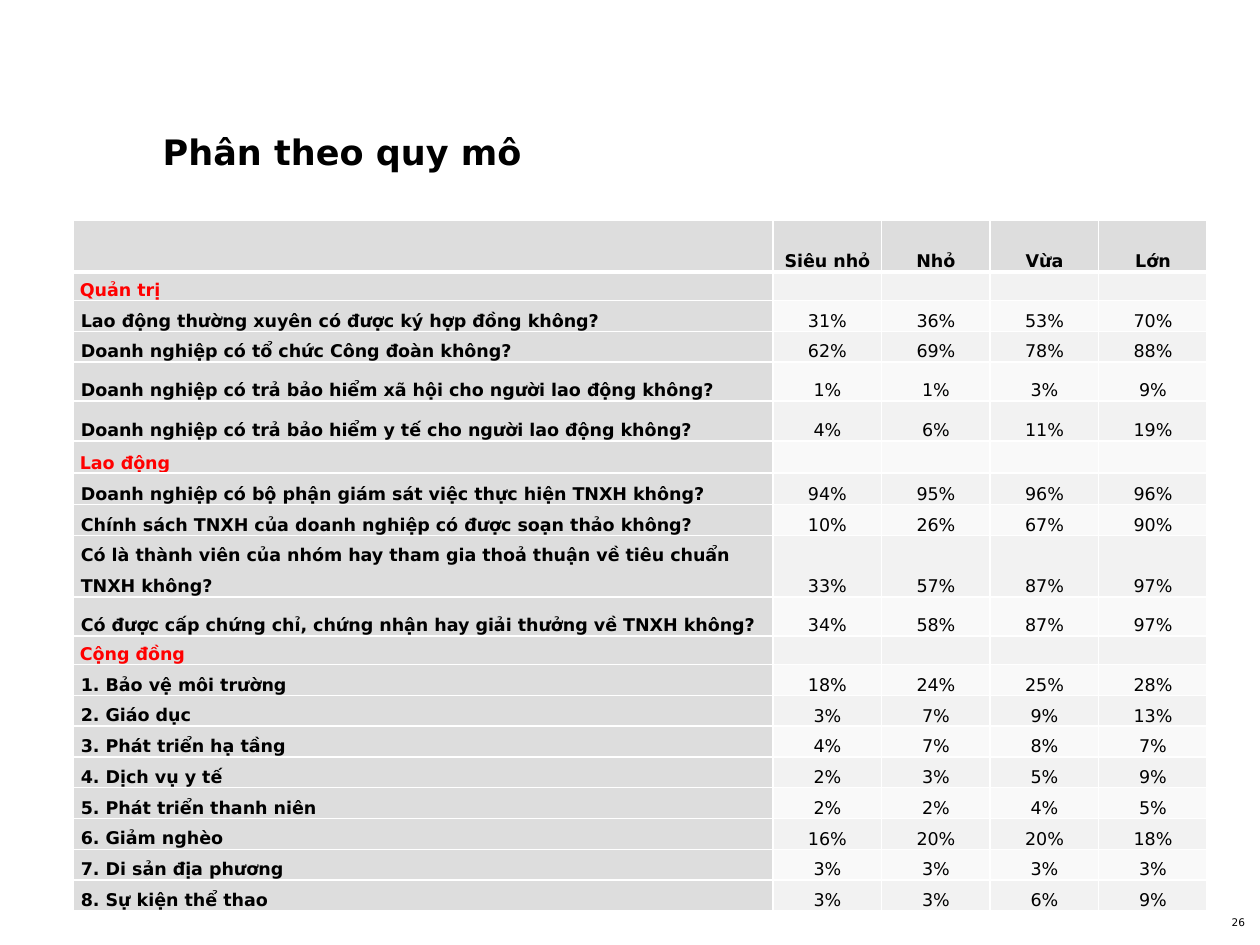
from lxml.etree import SubElement
from pptx import Presentation
from pptx.dml.color import RGBColor
from pptx.enum.text import MSO_ANCHOR, MSO_AUTO_SIZE, PP_ALIGN
from pptx.oxml import parse_xml
from pptx.oxml.ns import nsdecls, qn
from pptx.util import Cm, Pt

FONT = "DejaVu Sans"
BLACK = RGBColor(0x00, 0x00, 0x00)
RED = RGBColor(0xFF, 0x00, 0x00)
WHITE = RGBColor(0xFF, 0xFF, 0xFF)
HEAD_GREY = RGBColor(0xDD, 0xDD, 0xDD)
BANDS = (RGBColor(0xF9, 0xF9, 0xF9), RGBColor(0xF2, 0xF2, 0xF2))

SIZES = ("Siêu nhỏ", "Nhỏ", "Vừa", "Lớn")
# Label, row height in cm, percentages; a section heading has no percentages
ROWS = [
    ("Quản trị", 0.58, ()),
    ("Lao động thường xuyên có được ký hợp đồng không?", 0.62, (31, 36, 53, 70)),
    ("Doanh nghiệp có tổ chức Công đoàn không?", 0.62, (62, 69, 78, 88)),
    ("Doanh nghiệp có trả bảo hiểm xã hội cho người lao động không?", 0.78, (1, 1, 3, 9)),
    ("Doanh nghiệp có trả bảo hiểm y tế cho người lao động không?", 0.81, (4, 6, 11, 19)),
    ("Lao động", 0.65, ()),
    ("Doanh nghiệp có bộ phận giám sát việc thực hiện TNXH không?", 0.63, (94, 95, 96, 96)),
    ("Chính sách TNXH của doanh nghiệp có được soạn thảo không?", 0.62, (10, 26, 67, 90)),
    ("Có là thành viên của nhóm hay tham gia thoả thuận về tiêu chuẩn TNXH không?",
     1.24, (33, 57, 87, 97)),
    ("Có được cấp chứng chỉ, chứng nhận hay giải thưởng về TNXH không?", 0.79, (34, 58, 87, 97)),
    ("Cộng đồng", 0.58, ()),
    ("1. Bảo vệ môi trường", 0.62, (18, 24, 25, 28)),
    ("2. Giáo dục", 0.62, (3, 7, 9, 13)),
    ("3. Phát triển hạ tầng", 0.62, (4, 7, 8, 7)),
    ("4. Dịch vụ y tế", 0.62, (2, 3, 5, 9)),
    ("5. Phát triển thanh niên", 0.62, (2, 2, 4, 5)),
    ("6. Giảm nghèo", 0.62, (16, 20, 20, 18)),
    ("7. Di sản địa phương", 0.62, (3, 3, 3, 3)),
    ("8. Sự kiện thể thao", 0.62, (3, 3, 6, 9)),
]
HEADER_HEIGHT = 1.03
LABEL_SHARE = 0.617


def format_runs(p, size, bold=False, color=BLACK):
    for r in p.runs:
        r.font.name = FONT
        r.font.size = Pt(size)
        r.font.bold = bold
        r.font.color.rgb = color


def place_text(sp, box, text, size, bold=False, align=PP_ALIGN.LEFT, anchor=MSO_ANCHOR.TOP):
    sp.left, sp.top, sp.width, sp.height = (Cm(v) for v in box)
    tf = sp.text_frame
    tf.margin_left = tf.margin_top = tf.margin_right = tf.margin_bottom = 0
    tf.word_wrap = True
    tf.auto_size = MSO_AUTO_SIZE.NONE
    tf.vertical_anchor = anchor
    tf.text = text
    p = tf.paragraphs[0]
    p.alignment = align
    format_runs(p, size, bold)


def set_borders(cell, top=1, bottom=1):
    """Put the four edges first in the cell properties, ahead of the fill."""
    tcPr = cell._tc.get_or_add_tcPr()
    edges = (("lnL", 1), ("lnR", 1), ("lnT", top), ("lnB", bottom))
    for i, (tag, width) in enumerate(edges):
        tcPr.insert(i, parse_xml(
            f'<a:{tag} {nsdecls("a")} w="{Pt(width)}"><a:solidFill>'
            f'<a:srgbClr val="{WHITE}"/></a:solidFill></a:{tag}>'))


def fill_cell(cell, text, fill, bold=False, color=BLACK, align=PP_ALIGN.CENTER,
              margin=0.13, spacing=1.15, anchor=MSO_ANCHOR.BOTTOM):
    cell.fill.solid()
    cell.fill.fore_color.rgb = fill
    cell.margin_left = cell.margin_right = Cm(margin)
    cell.margin_top = cell.margin_bottom = 0
    cell.vertical_anchor = anchor
    cell.text = text
    p = cell.text_frame.paragraphs[0]
    p.alignment = align
    p.line_spacing = spacing
    format_runs(p, 10, bold, color)
    if not text:
        SubElement(p._p, qn("a:endParaRPr"), sz="1000")
    return p


def fill_label(cell, text, is_section):
    if is_section:
        fill_cell(cell, text, HEAD_GREY, True, RED, PP_ALIGN.LEFT)
        return
    anchor = MSO_ANCHOR.MIDDLE if text[0].isdigit() else MSO_ANCHOR.BOTTOM
    p = fill_cell(cell, text, HEAD_GREY, True, BLACK, PP_ALIGN.LEFT, 0.15, 1.5, anchor)
    p.space_after = Pt(10)


def add_survey_table(s, left, top, width):
    heights = [HEADER_HEIGHT] + [height for _, height, _ in ROWS]
    frame = s.shapes.add_table(len(heights), len(SIZES) + 1,
                               Cm(left), Cm(top), Cm(width), Cm(sum(heights)))
    table = frame.table
    table.first_row = table.horz_banding = False
    label_width = width * LABEL_SHARE
    value_width = (width - label_width) / len(SIZES)
    for i, column in enumerate(table.columns):
        column.width = Cm(value_width if i else label_width)
    for row, height in zip(table.rows, heights):
        row.height = Cm(height)

    for col, text in enumerate(("",) + SIZES):
        fill_cell(table.cell(0, col), text, HEAD_GREY, True)
        set_borders(table.cell(0, col), bottom=3)
    for i, (label, _, values) in enumerate(ROWS, 1):
        fill_label(table.cell(i, 0), label, not values)
        texts = [f"{v}%" for v in values] or [""] * len(SIZES)
        for col, text in enumerate(texts, 1):
            fill_cell(table.cell(i, col), text, BANDS[i % 2])
        for col in range(len(SIZES) + 1):
            set_borders(table.cell(i, col), top=3 if i == 1 else 1)


def main():
    prs = Presentation()
    prs.slide_width, prs.slide_height = Cm(25.4), Cm(19.05)
    s = prs.slides.add_slide(prs.slide_layouts[5])
    place_text(s.shapes.title, (3.28, 1.7, 15.98, 1.78), "Phân theo quy mô", 20, True,
               anchor=MSO_ANCHOR.BOTTOM)
    place_text(s.shapes.add_textbox(0, 0, 0, 0), (23.93, 18.47, 1.17, 0.43), "26", 6,
               align=PP_ALIGN.RIGHT)
    add_survey_table(s, 1.48, 4.45, 22.86)
    prs.save("out.pptx")


if __name__ == "__main__":
    main()
